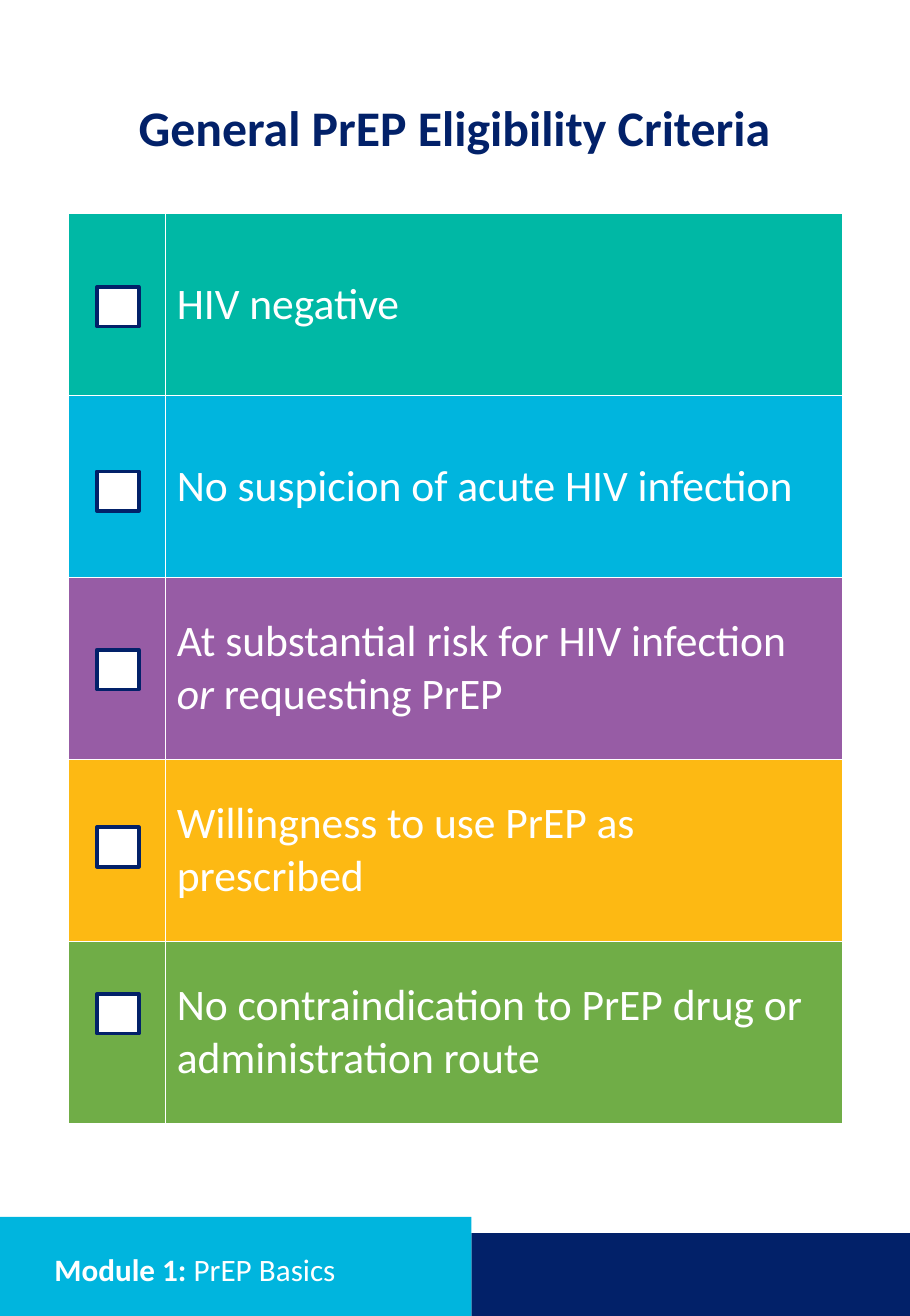
"""Build the PrEP eligibility checklist slide."""
import lxml.etree
import pptx
import pptx.dml.color
import pptx.enum.shapes
import pptx.enum.text
import pptx.oxml.ns
import pptx.util

PX = 9525
COLORS = {
    "navy": "022169",
    "cyan": "00B5DE",
    "teal": "00B8A5",
    "purple": "975CA5",
    "amber": "FDB913",
    "green": "70AD47",
    "white": "FFFFFF",
}
CRITERIA = [
    ("teal", 246, [("HIV negative", {})]),
    ("cyan", 404, [("No suspicion of acute HIV infection", {})]),
    ("purple", 557, [("At substantial risk for HIV infection ", {}),
                     ("or", {"italic": True}),
                     (" requesting PrEP", {})]),
    ("amber", 709, [("Willingness to use PrEP as prescribed", {})]),
    ("green", 852, [("No contraindication to PrEP drug or administration route", {})]),
]
COLUMN_WIDTHS = (83, 580)
ROW_HEIGHT = 156


def px(*lengths):
    return [pptx.util.Emu(length * PX) for length in lengths]


def rgb(name):
    return pptx.dml.color.RGBColor.from_string(COLORS[name])


def paint(fill, color):
    fill.solid()
    fill.fore_color.rgb = rgb(color)


def set_attributes(target, values):
    for name, value in values.items():
        setattr(target, name, value)


def write_runs(paragraph, runs, size, color):
    for text, extra in runs:
        run = paragraph.add_run()
        run.text = text
        set_attributes(run.font, {"name": "Calibri", "size": pptx.util.Pt(size),
                                  "bold": False, **extra})
        run.font.color.rgb = rgb(color)


def format_frame(text_frame, anchor, alignment):
    set_attributes(text_frame, {"word_wrap": True, "vertical_anchor": anchor,
                                "auto_size": pptx.enum.text.MSO_AUTO_SIZE.NONE})
    paragraph = text_frame.paragraphs[0]
    set_attributes(paragraph, {"alignment": alignment, "line_spacing": 0.9})
    return paragraph


def add_rectangle(slide, box, fill, line=None):
    shape = slide.shapes.add_shape(pptx.enum.shapes.MSO_SHAPE.RECTANGLE, *px(*box))
    shape.shadow.inherit = False
    paint(shape.fill, fill)
    if line:
        shape.line.color.rgb = rgb(line)
        shape.line.width = pptx.util.Pt(2.25)
    else:
        shape.line.fill.background()


def add_heading(slide):
    box = slide.shapes.add_textbox(*px(59, 84, 662, 78))
    paragraph = format_frame(box.text_frame, pptx.enum.text.MSO_ANCHOR.TOP,
                             pptx.enum.text.PP_ALIGN.CENTER)
    write_runs(paragraph, [("General PrEP Eligibility Criteria", {"bold": True})], 32, "navy")


def add_borders(cell):
    properties = cell._tc.get_or_add_tcPr()
    qn = pptx.oxml.ns.qn
    for side in ("lnL", "lnR", "lnT", "lnB"):
        line = lxml.etree.SubElement(properties, qn(f"a:{side}"), w=str(pptx.util.Pt(1)))
        solid = lxml.etree.SubElement(line, qn("a:solidFill"))
        lxml.etree.SubElement(solid, qn("a:srgbClr"), val=COLORS["white"])


def add_criteria_table(slide):
    box = (59, 183, sum(COLUMN_WIDTHS), ROW_HEIGHT * len(CRITERIA))
    table = slide.shapes.add_table(len(CRITERIA), 2, *px(*box)).table
    set_attributes(table, {"first_row": False, "horz_banding": False})
    for column, width in zip(table.columns, px(*COLUMN_WIDTHS)):
        column.width = width
    for row, (color, _, runs) in zip(table.rows, CRITERIA):
        row.height = px(ROW_HEIGHT)[0]
        for cell in row.cells:
            add_borders(cell)
            paint(cell.fill, color)
            cell.vertical_anchor = pptx.enum.text.MSO_ANCHOR.MIDDLE
        write_runs(row.cells[1].text_frame.paragraphs[0], runs, 28, "white")


def place_module_title(slide):
    title = slide.shapes.title
    slide.shapes._spTree.append(title._element)
    set_attributes(title, dict(zip(("left", "top", "width", "height"),
                                   px(37, 1068, 338, 43))))
    paragraph = format_frame(title.text_frame, pptx.enum.text.MSO_ANCHOR.MIDDLE,
                             pptx.enum.text.PP_ALIGN.LEFT)
    write_runs(paragraph, [("Module 1: ", {"bold": True}), ("PrEP Basics", {})], 20, "white")


def main():
    presentation = pptx.Presentation()
    presentation.slide_width, presentation.slide_height = px(780, 1128)
    slide = presentation.slides.add_slide(presentation.slide_layouts[5])
    add_rectangle(slide, (404, 1057, 376, 71), "navy")
    add_rectangle(slide, (0, 1043, 404, 85), "cyan")
    add_heading(slide)
    add_criteria_table(slide)
    for _, checkbox_top, _ in CRITERIA:
        add_rectangle(slide, (83, checkbox_top, 36, 34), "white", "navy")
    place_module_title(slide)
    presentation.save("out.pptx")


if __name__ == "__main__":
    main()
